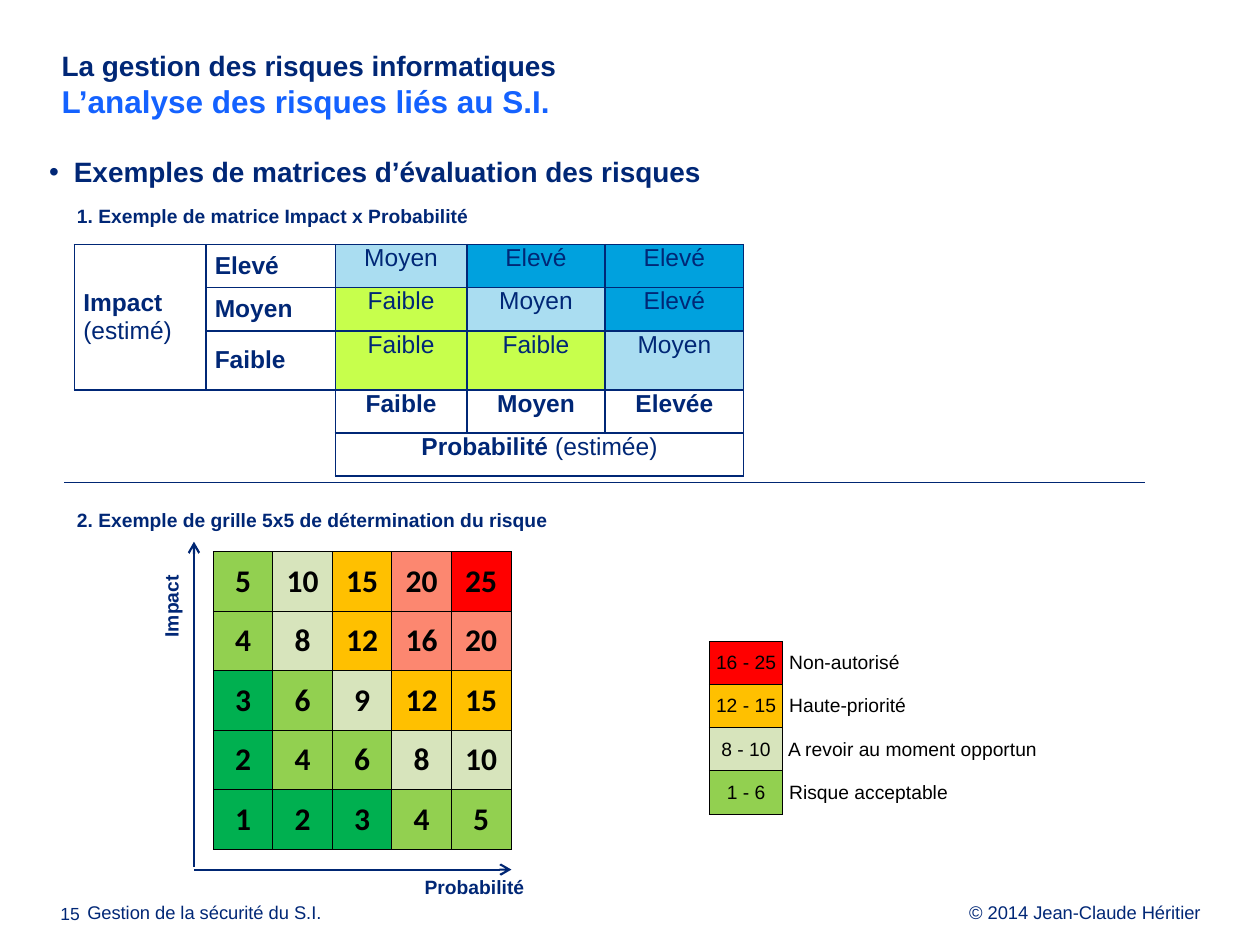
from dataclasses import dataclass

from lxml import etree
from pptx import Presentation
from pptx.dml.color import RGBColor
from pptx.enum.shapes import MSO_CONNECTOR
from pptx.enum.text import MSO_ANCHOR, MSO_AUTO_SIZE, PP_ALIGN
from pptx.oxml.ns import qn
from pptx.util import Cm, Pt

TOP, MIDDLE = MSO_ANCHOR.TOP, MSO_ANCHOR.MIDDLE
LEFT, CENTER, RIGHT = PP_ALIGN.LEFT, PP_ALIGN.CENTER, PP_ALIGN.RIGHT
FIT, FIXED = MSO_AUTO_SIZE.SHAPE_TO_FIT_TEXT, MSO_AUTO_SIZE.NONE
STRAIGHT = MSO_CONNECTOR.STRAIGHT
NO_STYLE = "{2D5ABB26-0587-4C30-8999-92F81FD0307C}"


@dataclass
class Theme:
    navy: str = "002776"
    axis: str = "002673"
    blue: str = "1462FF"
    black: str = "000000"
    green: str = "00B050"
    lime: str = "92D050"
    sage: str = "D7E4BC"
    amber: str = "FFC000"
    salmon: str = "FC8770"
    red: str = "FF0000"
    low: str = "C7FF4C"
    medium: str = "AADDF1"
    high: str = "00A1DE"
    font: str = "Arial"
    grid_font: str = "Calibri"
    heading: float = 16
    subtitle: float = 18
    score: float = 18
    matrix: float = 14
    label: float = 11
    footer: float = 10.5
    number: float = 10


T = Theme()


def style(p, size, color=T.navy, bold=False, font=T.font, align=LEFT):
    p.alignment = align
    for r in p.runs:
        r.font.size = Pt(size)
        r.font.bold = bold
        r.font.name = font
        r.font.color.rgb = RGBColor.from_string(color)


def paint(cell, fill=None, line=None, width=0.5):
    if fill:
        cell.fill.solid()
        cell.fill.fore_color.rgb = RGBColor.from_string(fill)
    else:
        cell.fill.background()
    if line:
        tcPr = cell._tc.get_or_add_tcPr()
        for i, side in enumerate("LRTB"):
            ln = etree.Element(qn(f"a:ln{side}"), w=str(Pt(width)))
            solid = etree.SubElement(ln, qn("a:solidFill"))
            etree.SubElement(solid, qn("a:srgbClr"), val=line)
            tcPr.insert(i, ln)


prs = Presentation()
prs.slide_width, prs.slide_height = Cm(25.4), Cm(19.05)
s = prs.slides.add_slide(prs.slide_layouts[1])

title, body = s.shapes.title, s.placeholders[1]
for sp, left, top, height in ((title, 1.14, 0.97, 1.75), (body, 0.89, 3.12, 14.71)):
    sp.left, sp.top, sp.width, sp.height = Cm(left), Cm(top), Cm(23.39), Cm(height)
    tf = sp.text_frame
    tf.auto_size, tf.vertical_anchor, tf.word_wrap = FIXED, TOP, True
    tf.margin_left = Cm(0.1)
    tf.margin_top = tf.margin_right = tf.margin_bottom = 0

p = title.text_frame.paragraphs[0]
p.text = "La gestion des risques informatiques"
p.add_line_break()
p.add_run().text = "L’analyse des risques liés au S.I."
style(p, T.heading, bold=True)
p.runs[1].font.size = Pt(T.subtitle)
p.runs[1].font.color.rgb = RGBColor.from_string(T.blue)

p = body.text_frame.paragraphs[0]
p.text = "Exemples de matrices d’évaluation des risques"
style(p, T.heading, bold=True)
p.space_before, p.space_after = 0, Pt(2.7)
pPr = p._p.get_or_add_pPr()
pPr.set("marL", str(Cm(0.5)))
pPr.set("indent", str(Cm(-0.5)))

for text, left, width, size, align in (
    ("© 2014 Jean-Claude Héritier", 17.78, 6.43, T.footer, RIGHT),
    ("Gestion de la sécurité du S.I.", 1.76, 6.43, T.footer, LEFT),
    ("15", 1.22, 0.66, T.number, LEFT),
):
    sp = s.shapes.add_textbox(Cm(left), Cm(18.24), Cm(width), Cm(0.41))
    tf = sp.text_frame
    tf.word_wrap = True
    tf.margin_left = tf.margin_top = tf.margin_right = tf.margin_bottom = 0
    tf.text = text
    p = tf.paragraphs[0]
    p.line_spacing = Pt(10.8)
    style(p, size, align=align)

tables = []
for left, top, widths, heights, side in (
    (4.3, 11.12, [1.2] * 5, [1.2] * 5, 0.02),
    (14.3, 12.93, [1.48, 5.71], [0.87] * 4, 0.02),
    (1.5, 4.93, [2.65, 2.61, 2.65, 2.79, 2.79], [0.87, 0.87, 1.18, 0.87, 0.87], 0.18),
):
    tbl = s.shapes.add_table(len(heights), len(widths), Cm(left), Cm(top),
                             Cm(sum(widths)), Cm(sum(heights))).table
    tbl.first_row = tbl.horz_banding = False
    tbl._tbl.tblPr.find(qn("a:tableStyleId")).text = NO_STYLE
    for column, width in zip(tbl.columns, widths):
        column.width = Cm(width)
    for row, height in zip(tbl.rows, heights):
        row.height = Cm(height)
    for cell in tbl.iter_cells():
        cell.margin_left = cell.margin_right = Cm(side)
        cell.margin_top = cell.margin_bottom = 0
        cell.vertical_anchor = MIDDLE
    tables.append(tbl)
grid, legend, matrix = tables

bands = ((3, T.green), (6, T.lime), (10, T.sage), (15, T.amber), (20, T.salmon), (25, T.red))
for i in range(5):
    for j in range(5):
        score = (5 - i) * (j + 1)
        cell = grid.cell(i, j)
        cell.text_frame.text = str(score)
        style(cell.text_frame.paragraphs[0], T.score, T.black, True, T.grid_font, CENTER)
        paint(cell, next(color for limit, color in bands if score <= limit), T.black)

for i, (scores, meaning, color) in enumerate((
    ("16 - 25", " Non-autorisé", T.red),
    ("12 - 15", " Haute-priorité", T.amber),
    ("8 - 10", " A revoir au moment opportun", T.sage),
    ("1 - 6", " Risque acceptable", T.lime),
)):
    for j, (text, align) in enumerate(((scores, CENTER), (meaning, LEFT))):
        cell = legend.cell(i, j)
        cell.text_frame.text = text
        style(cell.text_frame.paragraphs[0], T.label, T.black, align=align)
    paint(legend.cell(i, 0), color, T.black)
    paint(legend.cell(i, 1))

levels = {"Faible": T.low, "Moyen": T.medium, "Elevé": T.high}
for i, texts in enumerate((
    ("Impact", "Elevé", "Moyen", "Elevé", "Elevé"),
    ("", "Moyen", "Faible", "Moyen", "Elevé"),
    ("", "Faible", "Faible", "Faible", "Moyen"),
    ("", "", "Faible", "Moyen", "Elevée"),
    ("", "", "Probabilité ", "", ""),
)):
    for j, text in enumerate(texts):
        cell = matrix.cell(i, j)
        cell.text_frame.text = text
        rated = i < 3 and j > 1
        style(cell.text_frame.paragraphs[0], T.matrix, bold=not rated,
              align=CENTER if j > 1 else LEFT)
        if j > 1:
            cell.vertical_anchor = TOP
        paint(cell, levels[text] if rated else None,
              T.navy if i < 3 or j > 1 else None, 1)
p = matrix.cell(0, 0).text_frame.add_paragraph()
p.text = "(estimé)"
style(p, T.matrix)
p = matrix.cell(4, 2).text_frame.paragraphs[0]
p.add_run().text = "(estimée)"
style(p, T.matrix, align=CENTER)
p.runs[0].font.bold = True
matrix.cell(0, 0).merge(matrix.cell(2, 0))
matrix.cell(4, 2).merge(matrix.cell(4, 4))

for x1, y1, x2, y2, width, arrow in (
    (3.91, 17.53, 10.31, 17.53, 1.25, True),
    (3.91, 17.48, 3.91, 10.92, 1.25, True),
    (1.3, 9.73, 23.09, 9.73, 0.75, False),
):
    sp = s.shapes.add_connector(STRAIGHT, Cm(x1), Cm(y1), Cm(x2), Cm(y2))
    sp.line.color.rgb = RGBColor.from_string(T.axis)
    sp.line.width = Pt(width)
    if arrow:
        etree.SubElement(sp.line._get_or_add_ln(), qn("a:tailEnd"), type="arrow")
    etree.SubElement(sp._element.spPr, qn("a:effectLst"))

for text, left, top, width, rotation in (
    ("1. Exemple de matrice Impact x Probabilité", 1.3, 3.99, 8.43, 0),
    ("2. Exemple de grille 5x5 de détermination du risque", 1.3, 10.13, 10.16, 0),
    ("Probabilité", 8.31, 17.53, 2.54, 0),
    ("Impact", 2.57, 11.84, 1.78, 270),
):
    sp = s.shapes.add_textbox(Cm(left), Cm(top), Cm(width), Cm(0.74))
    sp.rotation = rotation
    tf = sp.text_frame
    tf.word_wrap, tf.auto_size = False, FIT
    tf.text = text
    style(tf.paragraphs[0], T.label, bold=True)

prs.save("out.pptx")
